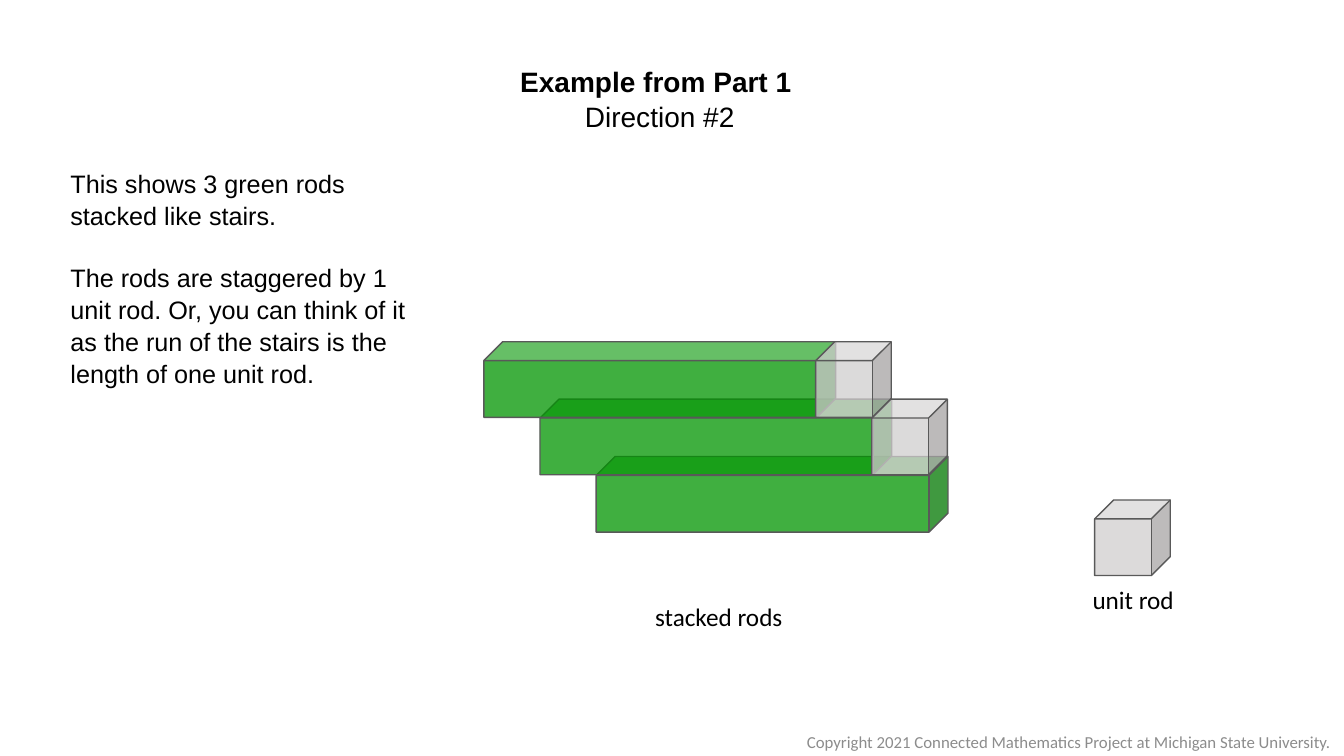
from lxml.etree import SubElement
from pptx import Presentation
from pptx.dml.color import RGBColor
from pptx.enum.shapes import MSO_SHAPE
from pptx.enum.text import MSO_ANCHOR, MSO_AUTO_SIZE, PP_ALIGN
from pptx.oxml.ns import qn
from pptx.util import Inches, Pt

COLUMNS, ROWS = 96, 54
GREEN, GRAY, OUTLINE = "009500", "D0CECE", "595959"
BLACK, MUTED = "000000", "8C8C8C"
CUBE_SIZE = 5.4
ROD_LENGTH = 25.13
ROD_COUNT = 3
STACK_LEFT, STACK_TOP = 34.56, 24.41
STEP_RUN, STEP_RISE = 4.01, 4.1
UNIT_OFFSET = 23.7


def color(hex_string):
    return RGBColor.from_string(hex_string)


class RodSlide:
    """Places elements on a 96 by 54 grid: left, top, width, height."""

    def __init__(self, presentation):
        self.cell_width = presentation.slide_width / COLUMNS
        self.cell_height = presentation.slide_height / ROWS
        self.slide = presentation.slides.add_slide(presentation.slide_layouts[5])

    def box(self, left, top, width, height):
        return (int(left * self.cell_width), int(top * self.cell_height),
                int(width * self.cell_width), int(height * self.cell_height))

    def add_paragraphs(self, frame, paragraphs, size, font="Arial", fill=BLACK,
                       align=PP_ALIGN.LEFT, spacing=1.0, gap=0):
        """Fill a text frame from (text, bold) pairs, one per paragraph."""
        for index, (text, bold) in enumerate(paragraphs):
            paragraph = frame.add_paragraph() if index else frame.paragraphs[0]
            paragraph.alignment = align
            paragraph.line_spacing = spacing
            paragraph.space_before = Pt(gap if index else 0)
            run = paragraph.add_run()
            run.text = text
            run.font.name, run.font.size, run.font.bold = font, Pt(size), bold
            run.font.color.rgb = color(fill)

    def title(self, box, paragraphs):
        shape = self.slide.shapes.title
        shape.left, shape.top, shape.width, shape.height = self.box(*box)
        frame = shape.text_frame
        frame.auto_size = MSO_AUTO_SIZE.NONE
        frame.vertical_anchor = MSO_ANCHOR.TOP
        self.add_paragraphs(frame, paragraphs, 20, align=PP_ALIGN.CENTER, spacing=1.05)

    def text(self, box, paragraphs, size, wrap=True, anchor=MSO_ANCHOR.TOP, **style):
        frame = self.slide.shapes.add_textbox(*self.box(*box)).text_frame
        frame.word_wrap = wrap
        frame.vertical_anchor = anchor
        self.add_paragraphs(frame, paragraphs, size, **style)

    def cube(self, left, top, width, fill, opacity=75):
        shape = self.slide.shapes.add_shape(
            MSO_SHAPE.CUBE, *self.box(left, top, width, CUBE_SIZE))
        shape.shadow.inherit = False
        shape.fill.solid()
        shape.fill.fore_color.rgb = color(fill)
        fill_color = shape.element.spPr.find(qn("a:solidFill"))[0]
        SubElement(fill_color, qn("a:alpha")).set("val", str(opacity * 1000))
        shape.line.color.rgb = color(OUTLINE)
        shape.line.width = Pt(1)


def main():
    presentation = Presentation()
    presentation.slide_width, presentation.slide_height = Inches(13.33), Inches(7.5)
    page = RodSlide(presentation)

    page.title((STACK_LEFT, 4.1, ROD_LENGTH, 5.54),
               [("Example from Part 1 ", True), ("Direction #2", False)])
    page.text((4.32, 11.59, 25.85, 15.98), [
        ("This shows 3 green rods stacked like stairs.", False),
        ("The rods are staggered by 1 unit rod. Or, you can think of it "
         "as the run of the stairs is the length of one unit rod.", False),
    ], 18, spacing=1.05, gap=21.7)

    # Lower rods lie behind the rods above them
    steps = [(STACK_LEFT + level * STEP_RUN, STACK_TOP + level * STEP_RISE)
             for level in reversed(range(ROD_COUNT))]
    for left, top in steps:
        page.cube(left, top, ROD_LENGTH, GREEN)
    for left, top in steps[1:]:
        page.cube(left + UNIT_OFFSET, top, CUBE_SIZE, GRAY)
    page.cube(78.19, 35.71, CUBE_SIZE, GRAY, opacity=74)

    for left, top, label in ((46.08, 42.62, "stacked rods"), (77.33, 41.4, "unit rod")):
        page.text((left, top, 18.67, 2.88), [(label, False)], 18, font="Calibri")
    page.text((56.81, 51.95, 39.1, 2.05), [
        ("Copyright 2021 Connected Mathematics Project at Michigan State University.", False),
    ], 12, wrap=False, anchor=MSO_ANCHOR.MIDDLE, font="Calibri", fill=MUTED,
        align=PP_ALIGN.CENTER)

    presentation.save("out.pptx")


if __name__ == "__main__":
    main()
